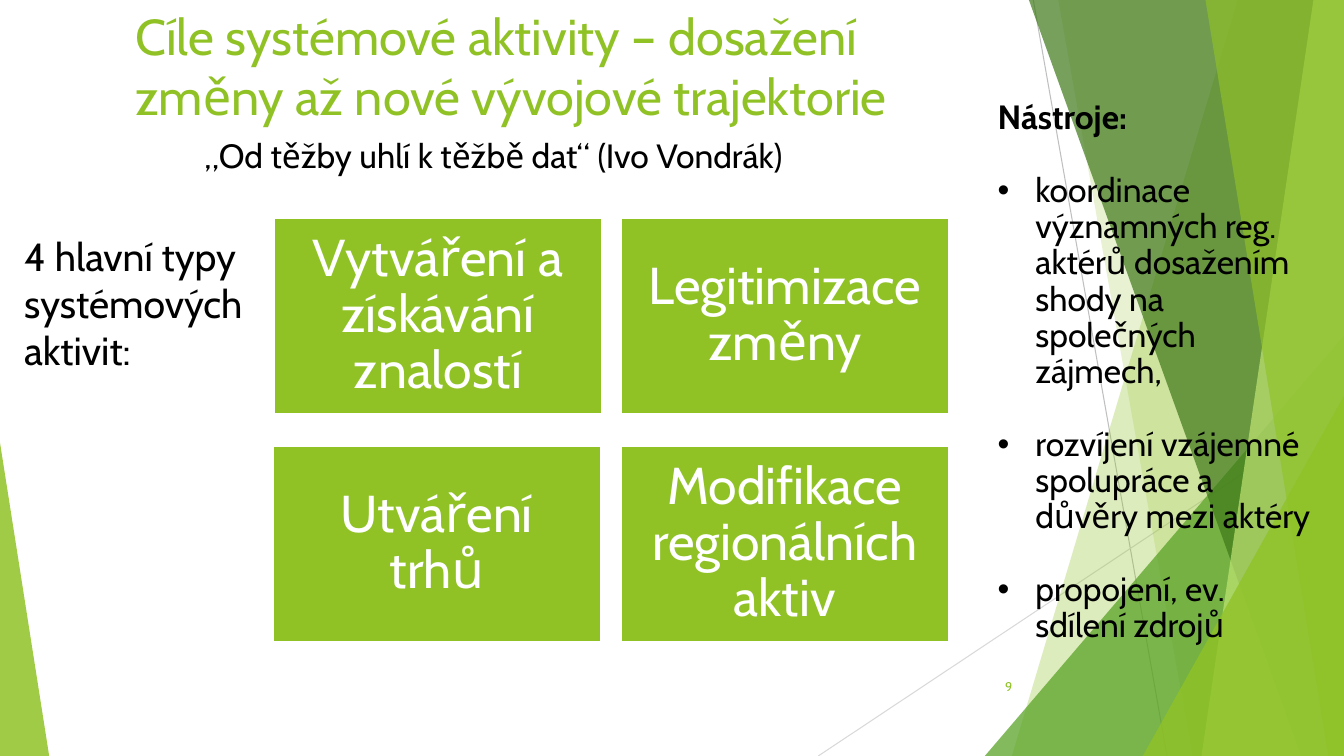
from lxml import etree
from pptx import Presentation
from pptx.dml.color import RGBColor
from pptx.enum.shapes import MSO_CONNECTOR, MSO_SHAPE
from pptx.enum.text import MSO_ANCHOR, MSO_AUTO_SIZE, PP_ALIGN
from pptx.oxml.ns import qn
from pptx.util import Cm, Pt

LEFT, CENTER, RIGHT = PP_ALIGN.LEFT, PP_ALIGN.CENTER, PP_ALIGN.RIGHT
TOP, MIDDLE = MSO_ANCHOR.TOP, MSO_ANCHOR.MIDDLE
RECT, TRIANGLE = MSO_SHAPE.RECTANGLE, MSO_SHAPE.ISOSCELES_TRIANGLE
STRAIGHT = MSO_CONNECTOR.STRAIGHT
NO_FIT = MSO_AUTO_SIZE.NONE

FONT = "Cabin"
COLORS = {
    "green": "90C226", "leaf": "54A021", "forest": "3F7819", "lime": "C0E474",
    "black": "000000", "white": "FFFFFF", "grey": "BFBFBF", "pale": "D9D9D9",
}
WIDTH, HEIGHT = 33.87, 19.05

TITLE = "Cíle systémové aktivity – dosažení změny až nové vývojové trajektorie"
TOOLS_HEAD = "Nástroje:"
TOOLS = [
    "koordinace významných reg. aktérů dosažením shody na společných zájmech,",
    "rozvíjení vzájemné spolupráce a důvěry mezi aktéry",
    "propojení, ev. sdílení zdrojů",
]
ACTIVITIES = [
    ("Vytváření a získávání znalostí", 6.91, 5.49),
    ("Utváření trhů", 6.88, 11.23),
    ("Legitimizace změny", 15.65, 5.49),
    ("Modifikace regionálních aktiv", 15.65, 11.23),
]
ACTIVITY_SIZE = (8.26, 4.95)
NOTES = [
    ("„Od těžby uhlí k těžbě dat“ (Ivo Vondrák)", (4.9, 3.28, 19.53, 1.17), 24, "black", LEFT, TOP),
    ("9", (23.85, 16.79, 1.91, 1.02), 9, "green", RIGHT, MIDDLE),
    ("4 hlavní typy systémových aktivit:", (0.36, 5.72, 6.3, 3.84), 28, "black", LEFT, TOP),
]
RAYS = [((26.04, 0), (29.41, HEIGHT), "grey"), ((WIDTH, 10.24), (20.62, HEIGHT), "pale")]
BANDS_BACK = [(31.19, 25.5, "green", 30), (26.67, 30.05, "green", 20)]
BANDS_FRONT = [
    (25.93, 32.79, "forest", 70), (33.1, 30.28, "lime", 70), (30.38, 33.48, "green", 65),
]
PEAK_BACK = [((24.82, 8.46, 9.05, 10.59), 1, "leaf", 72)]
PEAKS_FRONT = [
    ((28.8, 9.98, 5.07, 9.07), 1, "green", 80),
    ((0, 11.15, 1.24, 7.9), 0, "green", 85),
]


def rgb(name):
    return RGBColor.from_string(COLORS[name])


def cm(values):
    return [Cm(v) for v in values]


def set_all(target, formats):
    for name, value in formats.items():
        setattr(target, name, value)


def place(shape, box):
    set_all(shape, dict(zip(("left", "top", "width", "height"), cm(box))))


def write(p, text, size, color, bold=False, **formats):
    r = p.add_run()
    r.text = text
    set_all(r.font, {"name": FONT, "size": Pt(size), "bold": bold})
    r.font.color.rgb = rgb(color)
    set_all(p, formats)


def frame(shape, anchor=TOP, margin=None):
    tf = shape.text_frame
    set_all(tf, {"word_wrap": True, "auto_size": NO_FIT, "vertical_anchor": anchor})
    if margin is not None:
        sides = ("margin_left", "margin_top", "margin_right", "margin_bottom")
        set_all(tf, dict.fromkeys(sides, Cm(margin)))
    return tf


def tint(shape, color, opacity):
    shape.shadow.inherit = False
    shape.fill.solid()
    shape.fill.fore_color.rgb = rgb(color)
    shape.line.fill.background()
    clr = shape.element.spPr.find(qn("a:solidFill"))[0]
    etree.SubElement(clr, qn("a:alpha"), val=str(opacity * 1000))


def add_bands(bands):
    for top_x, bottom_x, color, opacity in bands:
        outline = s.shapes.build_freeform(Cm(top_x), 0)
        corners = [(WIDTH, 0), (WIDTH, HEIGHT), (bottom_x, HEIGHT)]
        outline.add_line_segments([cm(c) for c in corners], close=True)
        tint(outline.convert_to_shape(), color, opacity)


def add_peaks(peaks):
    for box, apex, color, opacity in peaks:
        sp = s.shapes.add_shape(TRIANGLE, *cm(box))
        sp.adjustments[0] = apex
        tint(sp, color, opacity)


def set_bullet(p, char=None):
    pPr = p._p.get_or_add_pPr()
    indent = Cm(0.95) if char else 0
    pPr.set("marL", str(indent))
    pPr.set("indent", str(-indent))
    if char:
        etree.SubElement(pPr, qn("a:buFont"), typeface="Arial")
        etree.SubElement(pPr, qn("a:buChar"), char=char)
    else:
        etree.SubElement(pPr, qn("a:buNone"))


prs = Presentation()
prs.slide_width, prs.slide_height = Cm(WIDTH), Cm(HEIGHT)
s = prs.slides.add_slide(prs.slide_layouts[1])
title, tools = s.placeholders[0], s.placeholders[1]

for start, end, color in RAYS:
    ray = s.shapes.add_connector(STRAIGHT, *cm(start + end))
    ray.line.color.rgb = rgb(color)
    ray.line.width = Pt(0.75)
    etree.SubElement(ray.element.spPr, qn("a:effectLst"))
add_bands(BANDS_BACK)
add_peaks(PEAK_BACK)
add_bands(BANDS_FRONT)
add_peaks(PEAKS_FRONT)

for placeholder in (title, tools):
    s.shapes.element.append(placeholder.element)

place(title, (3.15, 0, 21.74, 3.66))
write(frame(title).paragraphs[0], TITLE, 36, "green", alignment=LEFT)

place(tools, (24.89, 2.41, 8.61, 16.87))
tf = frame(tools)
for i, text in enumerate([TOOLS_HEAD] + TOOLS):
    p = tf.add_paragraph() if i else tf.paragraphs[0]
    set_bullet(p, "•" if i else None)
    write(p, text, 24, "black", bold=i == 0, line_spacing=0.9,
          space_before=Pt(26 if i else 0), space_after=Pt(0))

for text, x, y in ACTIVITIES:
    sp = s.shapes.add_shape(RECT, *cm((x, y) + ACTIVITY_SIZE))
    sp.shadow.inherit = False
    sp.fill.solid()
    sp.fill.fore_color.rgb = rgb("green")
    sp.line.color.rgb = rgb("white")
    sp.line.width = Pt(1.5)
    write(frame(sp, MIDDLE, 0.38).paragraphs[0], text, 37, "white",
          alignment=CENTER, line_spacing=0.9)

for text, box, size, color, align, anchor in NOTES:
    sp = s.shapes.add_textbox(*cm(box))
    write(frame(sp, anchor).paragraphs[0], text, size, color, alignment=align)

prs.save("out.pptx")
